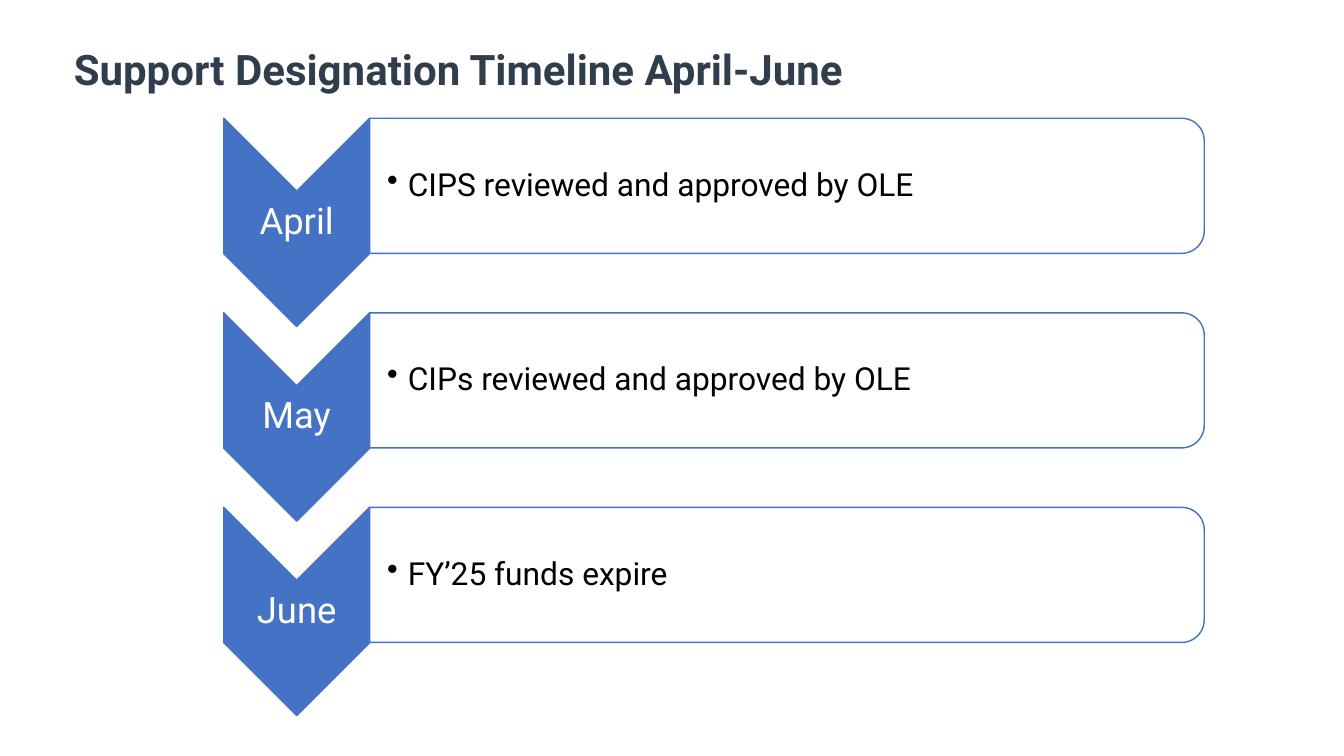
from lxml.etree import SubElement
from pptx import Presentation
from pptx.dml.color import RGBColor
from pptx.enum.shapes import MSO_SHAPE as Shape
from pptx.enum.text import MSO_ANCHOR as Anchor, PP_ALIGN as Align
from pptx.oxml.ns import qn
from pptx.util import Inches, Pt

COLORS = {
    "title": "2F3D4C",
    "accent": "4472C4",
    "white": "FFFFFF",
    "text": "000000",
}
FONT = "Roboto"
MONTHS = [
    ("April", "CIPS reviewed and approved by OLE"),
    ("May", "CIPs reviewed and approved by OLE"),
    ("June", "FY’25 funds expire"),
]
CHEVRON_WIDTH = Inches(2.17)
CHEVRON_HEIGHT = Inches(3.1)
PANEL_HEIGHT = Inches(2.01)


def color(name):
    return RGBColor.from_string(COLORS[name])


def add_text(shapes, box, text, size, color_name, insets, anchor=Anchor.MIDDLE):
    shape = shapes.add_textbox(*box)
    frame = shape.text_frame
    frame.word_wrap = True
    frame.vertical_anchor = anchor
    frame.margin_left, frame.margin_top, frame.margin_right, frame.margin_bottom = map(Inches, insets)
    frame.text = text
    paragraph = frame.paragraphs[0]
    font = paragraph.runs[0].font
    font.name = FONT
    font.size = Pt(size)
    font.color.rgb = color(color_name)
    return paragraph


def add_turned_shape(shapes, kind, box, fill_name):
    left, top, width, height = box
    shift = (width - height) // 2
    shape = shapes.add_shape(kind, left + shift, top - shift, height, width)
    shape.rotation = 90
    shape.shadow.inherit = False
    shape.fill.solid()
    shape.fill.fore_color.rgb = color(fill_name)
    shape.line.color.rgb = color("accent")
    shape.line.width = Pt(1.5)
    return shape


def set_transparent(shape, opacity):
    fill_color = shape.fill._xPr.find(qn("a:solidFill"))[0]
    SubElement(fill_color, qn("a:alpha")).set("val", str(opacity * 1000))


def set_bullet(paragraph, indent):
    properties = paragraph._p.get_or_add_pPr()
    properties.set("marL", str(indent))
    properties.set("indent", str(-indent))
    properties.set("lvl", "1")
    SubElement(properties, qn("a:buChar")).set("char", "•")


def add_title(slide, box):
    paragraph = add_text(slide.shapes, box, "Support Designation Timeline April-June",
                         45, "title", (0.1, 0.05, 0.1, 0.05), Anchor.TOP)
    paragraph.runs[0].font.bold = True


def add_month(shapes, box, month, task):
    left, top, width, height = box
    add_turned_shape(shapes, Shape.CHEVRON, (left, top, CHEVRON_WIDTH, height), "accent")
    notch = CHEVRON_WIDTH // 2
    label_box = (left, top + notch, CHEVRON_WIDTH, height - 2 * notch)
    label = add_text(shapes, label_box, month, 39, "white", (0.03, 0.03, 0.03, 0.03))
    label.alignment = Align.CENTER
    label.line_spacing = 0.9

    panel_left = left + CHEVRON_WIDTH
    panel_width = width - CHEVRON_WIDTH
    panel = add_turned_shape(shapes, Shape.ROUND_2_SAME_RECTANGLE,
                             (panel_left, top, panel_width, PANEL_HEIGHT), "white")
    set_transparent(panel, 90)
    margin = Inches(0.1)
    task_box = (panel_left, top + margin, panel_width - margin, PANEL_HEIGHT - 2 * margin)
    paragraph = add_text(shapes, task_box, task, 34, "text", (0.26, 0.02, 0.02, 0.02))
    paragraph.line_spacing = 0.9
    set_bullet(paragraph, Inches(0.31))


def add_timeline(slide, box):
    left, top, width, height = box
    group = slide.shapes.add_group_shape()
    pitch = (height - CHEVRON_HEIGHT) // (len(MONTHS) - 1)
    for index, (month, task) in enumerate(MONTHS):
        month_box = (left, top + index * pitch, width, CHEVRON_HEIGHT)
        add_month(group.shapes, month_box, month, task)


def main():
    presentation = Presentation()
    presentation.slide_width = Inches(20)
    presentation.slide_height = Inches(11.25)
    slide = presentation.slides.add_slide(presentation.slide_layouts[6])
    add_title(slide, (Inches(1), Inches(0.6), Inches(17.99), Inches(1.2)))
    add_timeline(slide, (Inches(3.33), Inches(1.76), Inches(14.59), Inches(8.89)))
    presentation.save("out.pptx")


if __name__ == "__main__":
    main()
